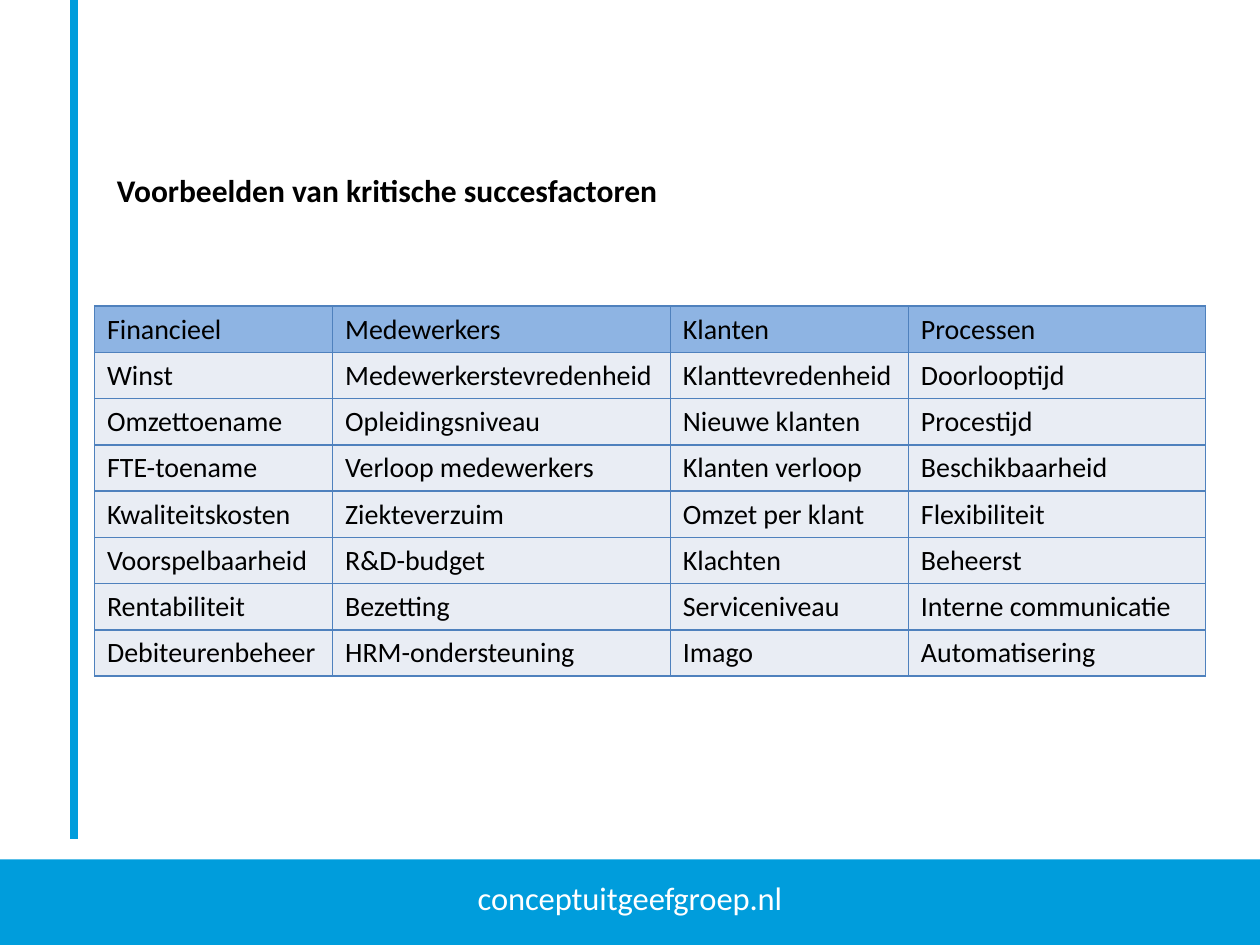
from collections import namedtuple
from dataclasses import dataclass

from lxml import etree
from pptx import Presentation
from pptx import util as u
from pptx.dml.color import RGBColor
from pptx.enum import shapes, text
from pptx.oxml.ns import qn

Box = namedtuple("Box", "left top width height")


@dataclass(frozen=True)
class Theme:
    font: str = "Calibri"
    brand: str = "009DDC"
    ink: str = "000000"
    paper: str = "FFFFFF"
    head_fill: str = "8EB4E3"
    body_fill: str = "E9EDF4"
    border: str = "4F81BD"
    footer_size: float = 32
    title_size: float = 18
    cell_size: float = 16
    rule_width: float = 4.5
    border_width: float = 1


THEME = Theme()
WIDTH, HEIGHT = 10, 7.5
FOOTER = Box(0, 6.82, WIDTH, 0.68)
RULE = Box(0.59, 0, 0, 6.66)
TITLE = Box(0.83, 1.31, 8.66, 0.7)
TABLE = Box(0.75, 2.43, 8.82, 2.93)
COLUMN_SHARES = (1.89, 2.68, 1.89, 2.36)

FACTORS = [
    ("Financieel", "Medewerkers", "Klanten", "Processen"),
    ("Winst", "Medewerkerstevredenheid", "Klanttevredenheid", "Doorlooptijd"),
    ("Omzettoename", "Opleidingsniveau", "Nieuwe klanten", "Procestijd"),
    ("FTE-toename", "Verloop medewerkers", "Klanten verloop", "Beschikbaarheid"),
    ("Kwaliteitskosten", "Ziekteverzuim", "Omzet per klant", "Flexibiliteit"),
    ("Voorspelbaarheid", "R&D-budget", "Klachten", "Beheerst"),
    ("Rentabiliteit", "Bezetting", "Serviceniveau", "Interne communicatie"),
    ("Debiteurenbeheer", "HRM-ondersteuning", "Imago", "Automatisering"),
]


def inches(box):
    return [u.Inches(value) for value in box]


def paint(fill, color):
    fill.solid()
    fill.fore_color.rgb = RGBColor.from_string(color)


def write(frame, words, size, color=THEME.ink, bold=False,
          align=text.PP_ALIGN.LEFT, raised=0):
    """Put one formatted line in a text frame; raised is a percentage."""
    para = frame.paragraphs[0]
    para.alignment = align
    span = para.add_run()
    span.text = words
    span.font.name = THEME.font
    span.font.size = u.Pt(size)
    span.font.bold = bold
    span.font.color.rgb = RGBColor.from_string(color)
    if raised:
        span.font._element.set("baseline", str(raised * 1000))


def add_borders(cell):
    properties = cell._tc.get_or_add_tcPr()
    for index, side in enumerate(("lnL", "lnR", "lnT", "lnB")):
        line = etree.Element(qn(f"a:{side}"), w=str(u.Pt(THEME.border_width)))
        fill = etree.SubElement(line, qn("a:solidFill"))
        etree.SubElement(fill, qn("a:srgbClr"), val=THEME.border)
        properties.insert(index, line)


def add_footer(page, box):
    band = page.shapes.add_shape(shapes.MSO_SHAPE.RECTANGLE, *inches(box))
    band.shadow.inherit = False
    paint(band.fill, THEME.brand)
    band.line.fill.background()
    band.text_frame.vertical_anchor = text.MSO_ANCHOR.BOTTOM
    write(band.text_frame, "conceptuitgeefgroep.nl", THEME.footer_size,
          color=THEME.paper, align=text.PP_ALIGN.CENTER, raised=30)


def add_rule(page, box):
    left, top, width, height = inches(box)
    rule = page.shapes.add_connector(
        shapes.MSO_CONNECTOR.STRAIGHT, left, top, left + width, top + height)
    rule.line.color.rgb = RGBColor.from_string(THEME.brand)
    rule.line.width = u.Pt(THEME.rule_width)
    etree.SubElement(rule._element.spPr, qn("a:effectLst"))


def add_title(page, box):
    title = page.shapes.add_textbox(*inches(box))
    title.text_frame.word_wrap = True
    write(title.text_frame, "Voorbeelden van kritische succesfactoren",
          THEME.title_size, bold=True)


def add_factor_table(page, box):
    table = page.shapes.add_table(
        len(FACTORS), len(COLUMN_SHARES), *inches(box)).table
    for column, share in zip(table.columns, COLUMN_SHARES):
        column.width = u.Inches(box.width * share / sum(COLUMN_SHARES))
    for index, (row, factors) in enumerate(zip(table.rows, FACTORS)):
        row.height = u.Inches(box.height / len(FACTORS))
        for cell, factor in zip(row.cells, factors):
            paint(cell.fill, THEME.body_fill if index else THEME.head_fill)
            add_borders(cell)
            write(cell.text_frame, factor, THEME.cell_size)


def main():
    deck = Presentation()
    deck.slide_width, deck.slide_height = u.Inches(WIDTH), u.Inches(HEIGHT)
    page = deck.slides.add_slide(deck.slide_layouts[6])
    paint(page.background.fill, THEME.paper)

    # Frame of the page
    add_footer(page, FOOTER)
    add_rule(page, RULE)

    # Content
    add_title(page, TITLE)
    add_factor_table(page, TABLE)
    deck.save("out.pptx")


if __name__ == "__main__":
    main()
